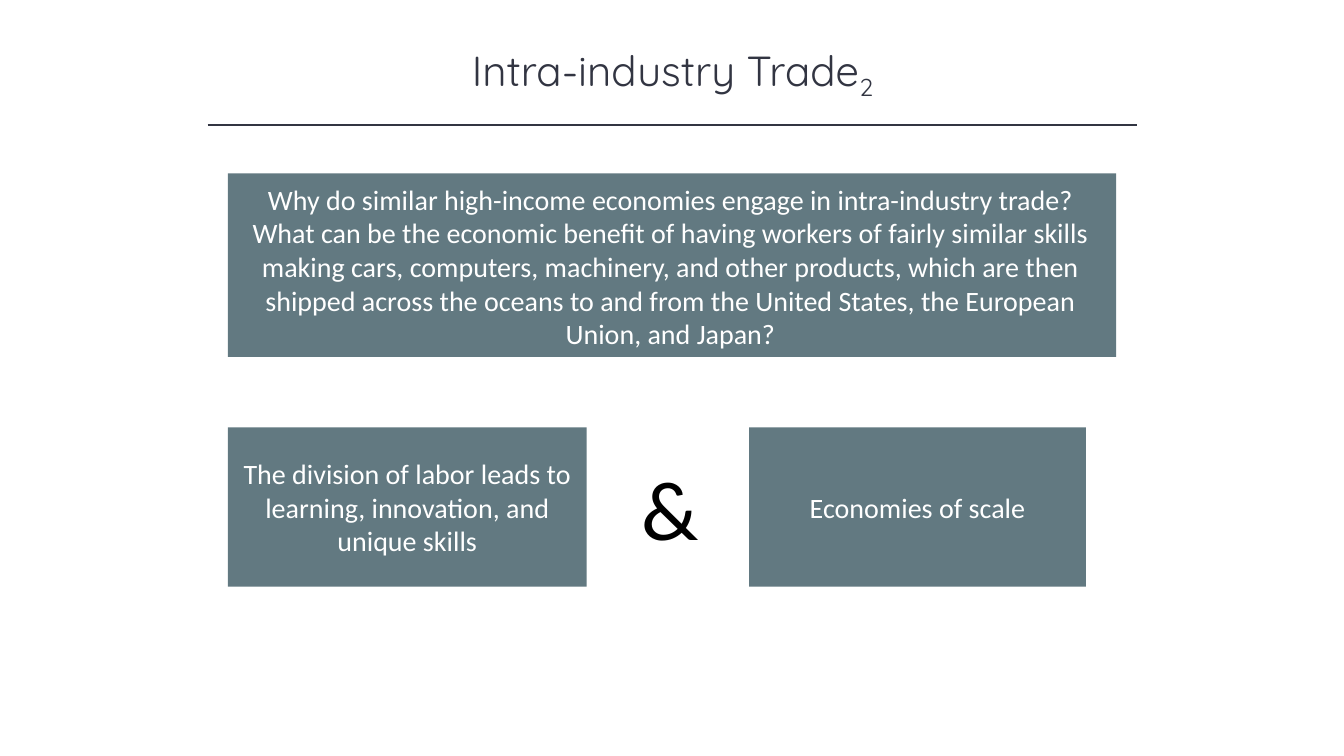
from dataclasses import dataclass

from lxml.etree import SubElement
from pptx import Presentation
from pptx.dml.color import RGBColor
from pptx.enum.shapes import MSO_CONNECTOR, MSO_SHAPE
from pptx.enum.text import MSO_ANCHOR, PP_ALIGN
from pptx.oxml.ns import qn
from pptx.util import Inches, Pt

HUES = {"ink": "323542", "slate": "627981", "white": "FFFFFF", "black": "000000"}


@dataclass
class Box:
    """A filled rectangle, with text if it has any."""
    left: float
    top: float
    width: float
    height: float
    text: str = ""
    anchor: MSO_ANCHOR = MSO_ANCHOR.MIDDLE


QUERY = [
    Box(2.26, 1.72, 8.81, 1.82),
    Box(2.38, 1.76, 8.54, 1.78,
        "Why do similar high-income economies engage in intra-industry trade? "
        "What can be the economic benefit of having workers of fairly similar skills "
        "making cars, computers, machinery, and other products, which are then "
        "shipped across the oceans to and from the United States, the European "
        "Union, and Japan?", MSO_ANCHOR.TOP),
]
CAUSES = [
    Box(2.26, 4.24, 3.56, 1.58,
        "The division of labor leads to learning, innovation, and unique skills"),
    Box(7.43, 4.24, 3.34, 1.58, "Economies of scale"),
]


def color(name: str) -> RGBColor:
    """Look up a colour by name."""
    return RGBColor.from_string(HUES[name])


def write(frame, text: str, *, size: float = 20, font: str = "Calibri",
          hue: str = "white", align=PP_ALIGN.CENTER,
          anchor=MSO_ANCHOR.TOP, base: int = 0) -> None:
    """Add a formatted run to the first paragraph of a frame."""
    frame.word_wrap = True
    frame.vertical_anchor = anchor
    para = frame.paragraphs[0]
    para.alignment = align
    run = para.add_run()
    run.text = text
    run.font.size = Pt(size)
    run.font.name = font
    run.font.color.rgb = color(hue)
    if base:
        run.font._element.set("baseline", str(base * 1000))


def draw(shapes, box: Box) -> None:
    """Draw one box into a slide or a group."""
    rect = shapes.add_shape(MSO_SHAPE.RECTANGLE, Inches(box.left), Inches(box.top),
                            Inches(box.width), Inches(box.height))
    rect.shadow.inherit = False
    rect.fill.solid()
    rect.fill.fore_color.rgb = color("slate")
    rect.line.fill.background()
    if box.text:
        write(rect.text_frame, box.text, anchor=box.anchor)


def head(shapes) -> None:
    """Set the title and the rule beneath it."""
    title = shapes.title
    title.left, title.top = Inches(1.67), Inches(0.39)
    title.width, title.height = Inches(10), Inches(0.61)
    for text, base in (("Intra-industry Trade", 0), ("2", -25)):
        write(title.text_frame, text, size=30, font="Quicksand", hue="ink", base=base)
    rule = shapes.add_connector(MSO_CONNECTOR.STRAIGHT, Inches(2.06), Inches(1.24),
                                Inches(11.28), Inches(1.24))
    rule.line.color.rgb = color("ink")
    rule.line.width = Pt(1)
    SubElement(rule._element.spPr, qn("a:effectLst"))


def main() -> None:
    """Build and save the slide."""
    deck = Presentation()
    deck.slide_width, deck.slide_height = Inches(13.33), Inches(7.5)
    shapes = deck.slides.add_slide(deck.slide_layouts[5]).shapes
    head(shapes)
    group = shapes.add_group_shape()
    for box in QUERY:
        draw(group.shapes, box)
    for box in CAUSES:
        draw(shapes, box)
    joint = shapes.add_textbox(Inches(6.26), Inches(4.48), Inches(1.01), Inches(1.11))
    write(joint.text_frame, "&", size=60, hue="black", align=PP_ALIGN.LEFT)
    deck.save("out.pptx")


if __name__ == "__main__":
    main()
